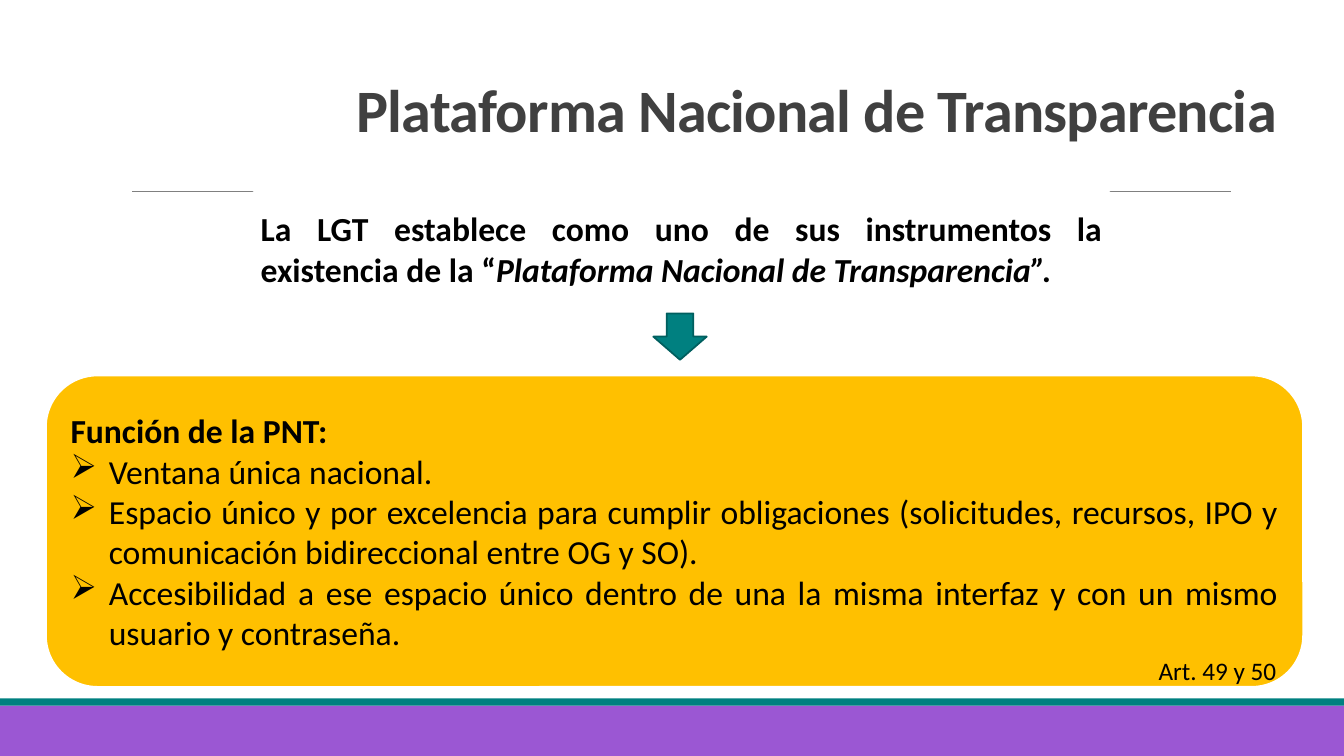
import pptx
import pptx.util
import pptx.dml.color
import pptx.enum.shapes
import pptx.enum.text
import pptx.oxml
import pptx.oxml.ns

Inches = pptx.util.Inches
Pt = pptx.util.Pt
SHAPES = pptx.enum.shapes.MSO_SHAPE
ALIGN = pptx.enum.text.PP_ALIGN
ANCHOR = pptx.enum.text.MSO_ANCHOR

COLORS = {
    "purple": "9B57D3",
    "teal": "008080",
    "dark_teal": "005F5F",
    "gray": "808080",
    "title": "404040",
    "white": "FFFFFF",
    "amber": "FFC000",
    "black": "000000",
}


def rgb(name):
    return pptx.dml.color.RGBColor.from_string(COLORS[name])


def write(paragraph, runs, color="black", align=ALIGN.JUSTIFY, **font):
    paragraph.alignment = align
    for text, extra in runs:
        run = paragraph.add_run()
        run.text = text
        run.font.color.rgb = rgb(color)
        for key, value in {"name": "Calibri", "size": Pt(24), **font, **extra}.items():
            setattr(run.font, key, value)


presentation = pptx.Presentation()
presentation.slide_width = Inches(13.33)
presentation.slide_height = Inches(7.5)
slide = presentation.slides.add_slide(presentation.slide_layouts[6])

rule = slide.shapes.add_connector(
    pptx.enum.shapes.MSO_CONNECTOR.STRAIGHT,
    Inches(1.31), Inches(1.9), Inches(12.21), Inches(1.9))
rule.line.color.rgb = rgb("gray")
rule.line.width = Pt(0.5)
rule._element.spPr.append(pptx.oxml.parse_xml(
    "<a:effectLst %s/>" % pptx.oxml.ns.nsdecls("a")))

panels = {}
for part, kind, box, fill, line, width in [
    ("footer", SHAPES.RECTANGLE, (0, 7, 13.33, 0.5), "purple", None, 0),
    ("footer edge", SHAPES.RECTANGLE, (0, 6.93, 13.33, 0.07), "teal", None, 0),
    ("premise", SHAPES.ROUNDED_RECTANGLE, (2.43, 1.88, 8.66, 1.17), "white", "white", 2),
    ("function", SHAPES.ROUNDED_RECTANGLE, (0.45, 3.72, 12.48, 3.1), "amber", "white", 2),
    ("arrow", SHAPES.DOWN_ARROW, (6.48, 3.11, 0.53, 0.46), "teal", "dark_teal", 1.25),
]:
    panel = slide.shapes.add_shape(kind, *map(Inches, box))
    panel.shadow.inherit = False
    panel.fill.solid()
    panel.fill.fore_color.rgb = rgb(fill)
    if line:
        panel.line.color.rgb = rgb(line)
        panel.line.width = Pt(width)
    else:
        panel.line.fill.background()
    panel.text_frame.vertical_anchor = ANCHOR.MIDDLE
    panels[part] = panel

title = slide.shapes.add_textbox(
    Inches(2.86), Inches(0.64), Inches(10.48), Inches(0.85)).text_frame
title.word_wrap = True
title.vertical_anchor = ANCHOR.BOTTOM
heading = title.paragraphs[0]
heading.line_spacing = 0.85
write(heading, [("Plataforma Nacional de Transparencia", {})],
      color="title", align=ALIGN.CENTER, size=Pt(43), bold=True)
heading.runs[0].font._element.set("spc", "-50")

write(panels["premise"].text_frame.paragraphs[0], [
    ("La LGT establece como uno de sus instrumentos la existencia de la “", {}),
    ("Plataforma Nacional de Transparencia”.", {"italic": True}),
], bold=True)

function = panels["function"].text_frame
write(function.paragraphs[0], [("Función de la PNT:", {})], bold=True)
for duty in [
    "Ventana única nacional.",
    "Espacio único y por excelencia para cumplir obligaciones (solicitudes, "
    "recursos, IPO y comunicación bidireccional entre OG y SO).",
    "Accesibilidad a ese espacio único dentro de una la misma interfaz y con "
    "un mismo usuario y contraseña.",
]:
    item = function.add_paragraph()
    properties = item._p.get_or_add_pPr()
    properties.set("marL", str(Inches(0.38)))
    properties.set("indent", str(-Inches(0.38)))
    properties.append(pptx.oxml.parse_xml(
        '<a:buChar %s char="➢"/>' % pptx.oxml.ns.nsdecls("a")))
    write(item, [(duty, {})], bold=False)

articles = slide.shapes.add_textbox(
    Inches(11.26), Inches(6.45), Inches(1.63), Inches(0.4)).text_frame
articles.word_wrap = True
articles.auto_size = pptx.enum.text.MSO_AUTO_SIZE.SHAPE_TO_FIT_TEXT
write(articles.paragraphs[0], [("Art. 49 y 50", {})], align=ALIGN.CENTER, size=Pt(18))

presentation.save("out.pptx")
